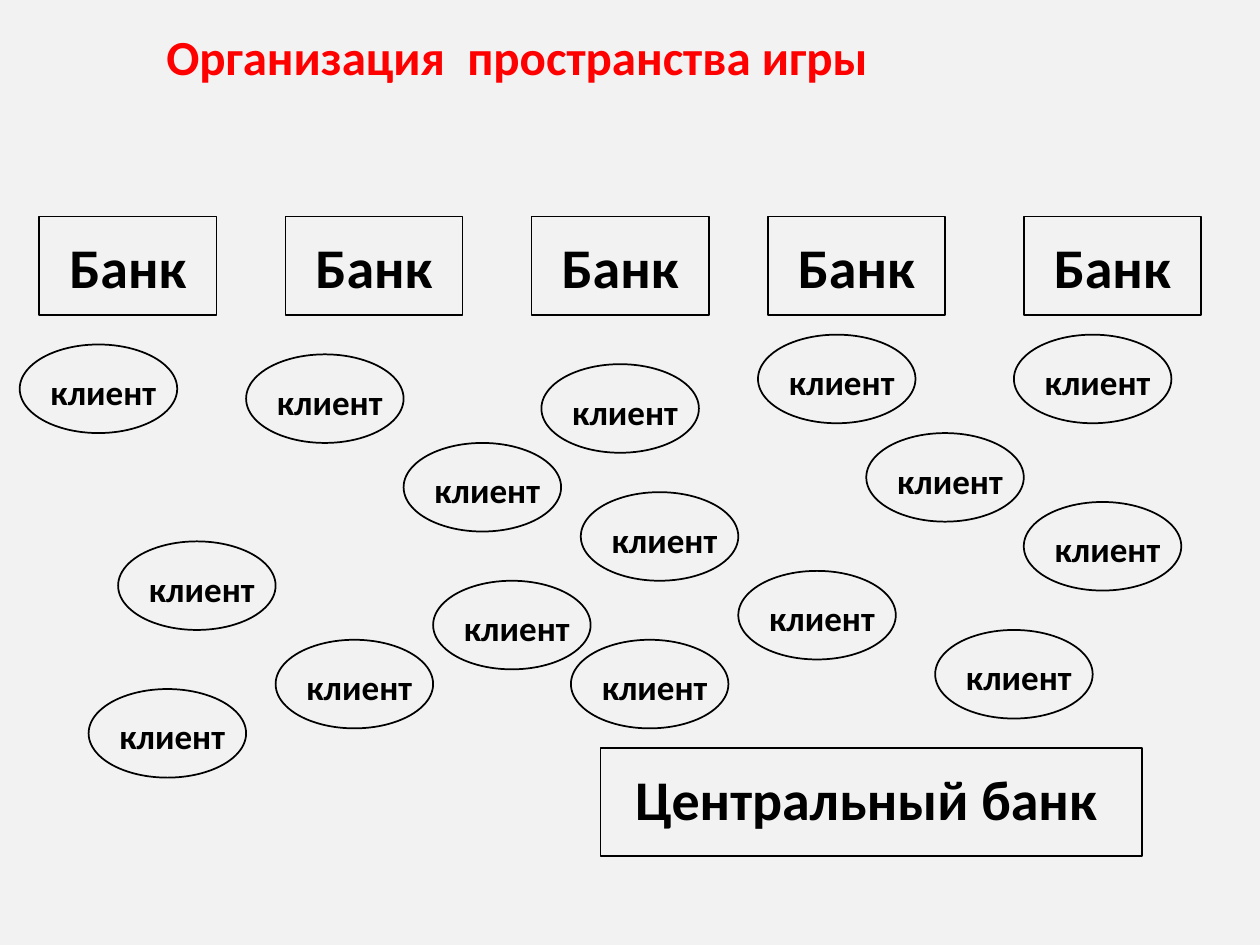
from pptx import Presentation
from pptx.dml.color import RGBColor
from pptx.enum.shapes import MSO_SHAPE
from pptx.enum.text import MSO_ANCHOR, MSO_AUTO_SIZE, PP_ALIGN
from pptx.util import Emu, Pt

RECTANGLE = MSO_SHAPE.RECTANGLE
OVAL = MSO_SHAPE.OVAL
CENTER = PP_ALIGN.CENTER
TOP = MSO_ANCHOR.TOP
GROW = MSO_AUTO_SIZE.SHAPE_TO_FIT_TEXT
PX = 914400 / 128
BLACK = "000000"


def px(*lengths):
    return [Emu(round(length * PX)) for length in lengths]


def write(box, text, size, color=BLACK):
    frame = box.text_frame
    frame.word_wrap = True
    frame.auto_size = GROW
    frame.vertical_anchor = TOP
    para = frame.paragraphs[0]
    para.alignment = CENTER
    span = para.add_run()
    span.text = text
    span.font.name = "Calibri"
    span.font.size = Pt(size)
    span.font.bold = True
    span.font.color.rgb = RGBColor.from_string(color)


deck = Presentation()
deck.slide_width, deck.slide_height = px(1280, 960)
page = deck.slides.add_slide(deck.slide_layouts[5])
page.background.fill.solid()
page.background.fill.fore_color.rgb = RGBColor.from_string("F2F2F2")

title = page.shapes.title
title.left, title.top, title.width, title.height = px(20, 20, 1010, 73)
write(title, "Организация  пространства игры", size=28, color="FF0000")

bank_lefts = [40, 290, 540, 780, 1040]
client_places = [
    (120, 550), (750, 580), (250, 360), (440, 590),
    (410, 450), (550, 370), (1030, 340), (770, 340),
    (20, 350), (880, 440), (1040, 510), (90, 700),
    (280, 650), (580, 650), (590, 500), (950, 640),
]

players = [("Банк", 32, RECTANGLE, (left, 220, 180, 100), (left - 10, 230, 200, 82))
           for left in bank_lefts]
players.append(("Центральный банк", 32, RECTANGLE, (610, 760, 550, 110), (550, 770, 660, 82)))
players += [("клиент", 20, OVAL, (left, top, 160, 90), (left - 20, top + 20, 210, 56))
            for left, top in client_places]

for text, size, kind, outline_place, label_place in players:
    group = page.shapes.add_group_shape()
    label = group.shapes.add_textbox(*px(*label_place))
    write(label, text, size=size)
    outline = group.shapes.add_shape(kind, *px(*outline_place))
    outline.shadow.inherit = False
    outline.fill.background()
    outline.line.color.rgb = RGBColor.from_string(BLACK)
    outline.line.width = Pt(1)

deck.save("out.pptx")
